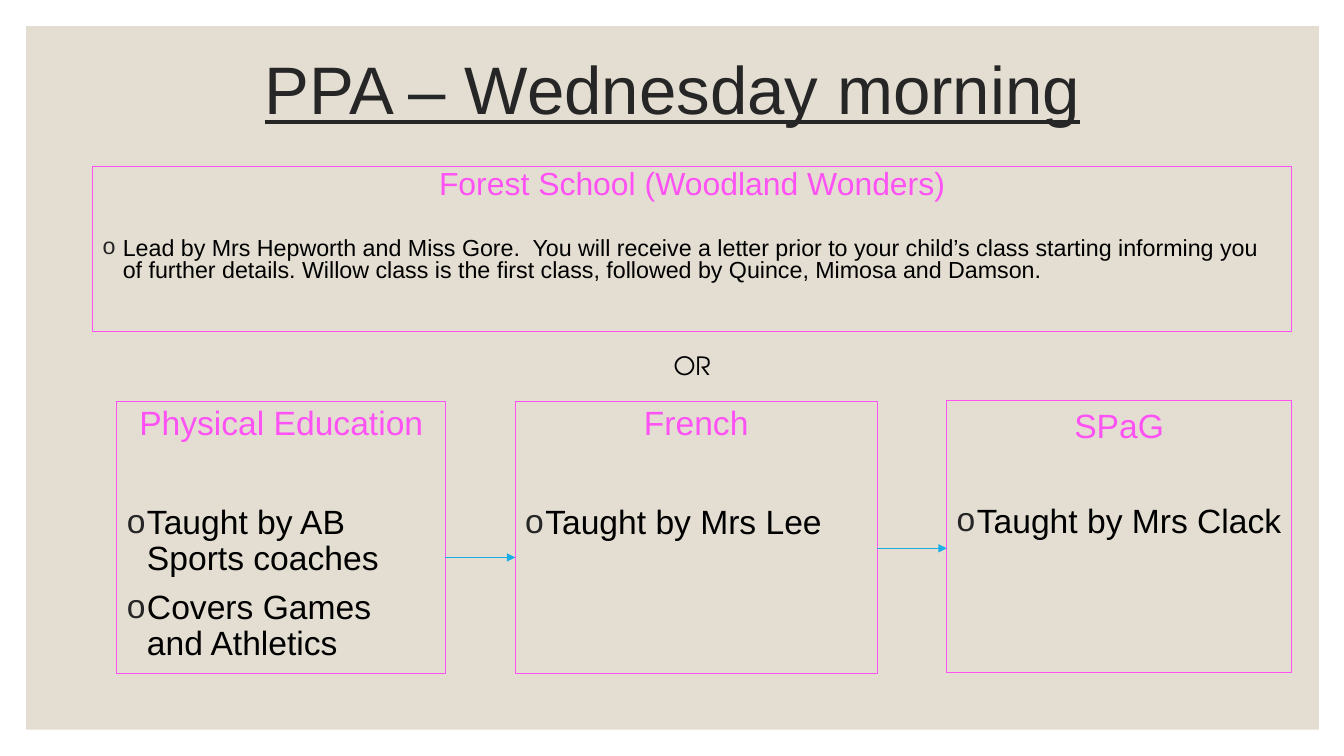
"""Build the slide that shows the Wednesday morning PPA lessons."""
from lxml import etree
from pptx import Presentation
from pptx.dml.color import RGBColor
from pptx.enum.shapes import MSO_CONNECTOR as Connector, MSO_SHAPE as Preset
from pptx.enum.text import MSO_ANCHOR as Anchor, MSO_AUTO_SIZE as AutoSize, PP_ALIGN as Align
from pptx.oxml.ns import qn
from pptx.util import Inches, Pt

COLORS = {"panel": "E3DED1", "title": "262626", "pink": "FF52F5",
          "text": "000000", "arrow": "1CADE4"}


def set_all(target, values):
    """Set each named attribute on the target."""
    for name, value in values.items():
        setattr(target, name, value)


class LessonSlide:
    """Hold the style and the slide, and add each kind of element."""

    def __init__(self, presentation, font="Arial"):
        """Add a blank slide."""
        self.slide = presentation.slides.add_slide(presentation.slide_layouts[6])
        self.font = font

    def color(self, name):
        """Return a named colour."""
        return RGBColor.from_string(COLORS[name])

    def rectangle(self, place, fill=None, line=None):
        """Add a plain rectangle with an optional fill and outline."""
        shape = self.slide.shapes.add_shape(Preset.RECTANGLE, *map(Inches, place))
        shape.shadow.inherit = False
        for style, name in ((shape.fill, fill), (shape.line.fill, line)):
            if name:
                style.solid()
                style.fore_color.rgb = self.color(name)
            else:
                style.background()
        if line:
            shape.line.width = Pt(0.75)
        return shape

    def fill_paragraph(self, paragraph, text, size, color, font=None, underline=None, **layout):
        """Fill a paragraph with one formatted run."""
        set_all(paragraph, layout)
        run = paragraph.add_run()
        run.text = text
        set_all(run.font, {"size": Pt(size), "name": font or self.font, "underline": underline})
        run.font.color.rgb = self.color(color)

    def bullet(self, paragraph):
        """Give a paragraph a hanging round bullet."""
        properties = paragraph._p.get_or_add_pPr()
        indent = Inches(0.2)
        properties.set("marL", str(indent))
        properties.set("indent", str(-indent))
        color = etree.SubElement(properties, qn("a:buClr"))
        etree.SubElement(color, qn("a:srgbClr"), val=COLORS["title"])
        etree.SubElement(properties, qn("a:buFont"), typeface=self.font)
        etree.SubElement(properties, qn("a:buChar"), char="o")

    def text(self, place, text, size, color, wrap=True, **layout):
        """Add a text box with one centred line."""
        frame = self.slide.shapes.add_textbox(*map(Inches, place)).text_frame
        set_all(frame, {"word_wrap": wrap, "vertical_anchor": Anchor.MIDDLE if wrap else Anchor.TOP,
                        "auto_size": AutoSize.NONE if wrap else AutoSize.SHAPE_TO_FIT_TEXT})
        self.fill_paragraph(frame.paragraphs[0], text, size, color,
                            alignment=Align.CENTER, **layout)

    def lesson(self, place, heading, points, gap, spacing, heading_size=24, point_size=24):
        """Add an outlined box with a heading and bulleted points."""
        frame = self.rectangle(place, line="pink").text_frame
        set_all(frame, {"word_wrap": True, "vertical_anchor": Anchor.TOP})
        self.fill_paragraph(frame.paragraphs[0], heading, heading_size, "pink",
                            alignment=Align.CENTER, line_spacing=spacing, space_before=Pt(9))
        for index, point in enumerate(points):
            paragraph = frame.add_paragraph()
            self.fill_paragraph(paragraph, point, point_size, "text", alignment=Align.LEFT,
                                line_spacing=spacing, space_before=Pt(9 if index else gap))
            self.bullet(paragraph)

    def arrow(self, left, right, y):
        """Add a level arrow from left to right."""
        ends = map(Inches, (left, y, right, y))
        connector = self.slide.shapes.add_connector(Connector.STRAIGHT, *ends)
        connector.line.color.rgb = self.color("arrow")
        connector.line.width = Pt(0.5)
        properties = connector._element.spPr
        etree.SubElement(properties.find(qn("a:ln")), qn("a:tailEnd"), type="triangle")
        etree.SubElement(properties, qn("a:effectLst"))


def main():
    """Build and save the presentation."""
    presentation = Presentation()
    set_all(presentation, {"slide_width": Inches(13.33), "slide_height": Inches(7.5)})
    page = LessonSlide(presentation)
    page.rectangle((0.26, 0.26, 12.82, 6.98), fill="panel")
    page.text((1.17, 0.17, 11, 1.5), "PPA – Wednesday morning", 48, "title",
              underline=True, line_spacing=0.9)
    lessons = [
        ((1.16, 3.98, 3.26, 2.7), "Physical Education",
         ["Taught by AB Sports coaches", "Covers Games and Athletics"], 45, 0.9),
        ((5.11, 3.98, 3.59, 2.7), "French", ["Taught by Mrs Lee"], 45, 0.9),
        ((9.39, 3.97, 3.42, 2.7), "SPaG", ["Taught by Mrs Clack"], 39, 1.0),
    ]
    for lesson in lessons:
        page.lesson(*lesson)
    page.lesson((0.92, 1.65, 11.89, 1.64), "Forest School (Woodland Wonders)",
                ["Lead by Mrs Hepworth and Miss Gore.  You will receive a letter prior to your "
                 "child’s class starting informing you of further details. Willow class is the "
                 "first class, followed by Quince, Mimosa and Damson."],
                26, 0.8, heading_size=22.8, point_size=16.6)
    page.text((6.58, 3.43, 0.57, 0.4), "OR", 18, "text", wrap=False, font="TeX Gyre Adventor")
    for arrow in ((4.41, 5.11, 5.53), (8.7, 9.39, 5.44)):
        page.arrow(*arrow)
    presentation.save("out.pptx")


if __name__ == "__main__":
    main()
